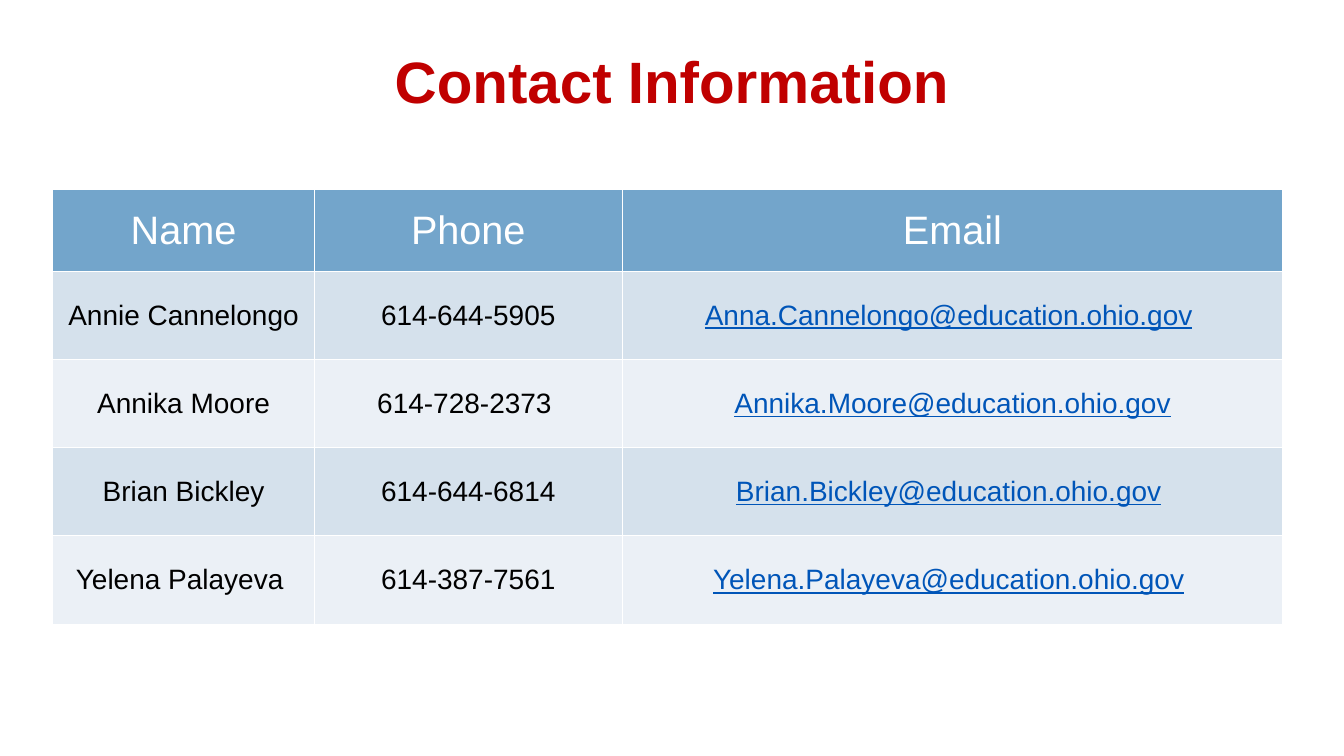
from pptx import Presentation
from pptx.dml.color import RGBColor
from pptx.enum.text import MSO_ANCHOR, MSO_AUTO_SIZE, PP_ALIGN
from pptx.util import Inches, Pt

# Content
TITLE = "Contact Information"
HEADINGS = ("Name", "Phone", "Email")
CONTACTS = [
    ("Annie Cannelongo", "614-644-5905", "Anna.Cannelongo@education.ohio.gov "),
    ("Annika Moore", "614-728-2373 ", "Annika.Moore@education.ohio.gov"),
    ("Brian Bickley", "614-644-6814", "Brian.Bickley@education.ohio.gov "),
    ("Yelena Palayeva ", "614-387-7561", "Yelena.Palayeva@education.ohio.gov "),
]

# Look
FONT = "Arial"
RED = RGBColor(0xC0, 0x00, 0x00)
WHITE = RGBColor(0xFF, 0xFF, 0xFF)
BLACK = RGBColor(0x00, 0x00, 0x00)
LINK_BLUE = RGBColor(0x00, 0x55, 0xB8)
HEADER_BLUE = RGBColor(0x73, 0xA5, 0xCB)
BANDS = (RGBColor(0xD5, 0xE1, 0xEC), RGBColor(0xEB, 0xF0, 0xF6))

# Grid, in inches
COLUMNS = (3.11, 3.67, 7.86)
HEADER_HEIGHT, ROW_HEIGHT = 0.97, 1.05
TABLE_LEFT, TABLE_TOP = 0.63, 2.26
EMAIL = HEADINGS.index("Email")


def add_span(para, text, size, color, bold=False, underline=False):
    span = para.add_run()
    span.text = text
    font = span.font
    font.name, font.size, font.bold = FONT, Pt(size), bold
    font.underline = underline
    font.color.rgb = color


def style_cell(cell, fill):
    cell.fill.solid()
    cell.fill.fore_color.rgb = fill
    cell.vertical_anchor = MSO_ANCHOR.MIDDLE
    cell.margin_left = cell.margin_right = Inches(0.12)
    cell.margin_top = cell.margin_bottom = Inches(0.06)
    para = cell.text_frame.paragraphs[0]
    para.alignment = PP_ALIGN.CENTER
    return para


deck = Presentation()
deck.slide_width, deck.slide_height = Inches(16), Inches(9)
page = deck.slides.add_slide(deck.slide_layouts[5])

# Title
title = page.shapes.title
title.left, title.top = Inches(2.6), Inches(0.53)
title.width, title.height = Inches(10.8), Inches(0.85)
frame = title.text_frame
frame.auto_size = MSO_AUTO_SIZE.NONE
frame.margin_left = frame.margin_right = frame.margin_top = frame.margin_bottom = 0
frame.vertical_anchor = MSO_ANCHOR.MIDDLE
frame.paragraphs[0].alignment = PP_ALIGN.CENTER
add_span(frame.paragraphs[0], TITLE, 50, RED, bold=True)

# Table
heights = [HEADER_HEIGHT] + [ROW_HEIGHT] * len(CONTACTS)
table = page.shapes.add_table(
    len(heights), len(COLUMNS), Inches(TABLE_LEFT), Inches(TABLE_TOP),
    Inches(sum(COLUMNS)), Inches(sum(heights))).table
for column, width in zip(table.columns, COLUMNS):
    column.width = Inches(width)
for row, height in zip(table.rows, heights):
    row.height = Inches(height)

# Header row
for col, heading in enumerate(HEADINGS):
    add_span(style_cell(table.cell(0, col), HEADER_BLUE), heading, 34, WHITE)

# Contact rows, with only the address itself underlined
for number, contact in enumerate(CONTACTS):
    for col, text in enumerate(contact):
        para = style_cell(table.cell(number + 1, col), BANDS[number % 2])
        if col == EMAIL:
            address = text.rstrip()
            add_span(para, address, 24, LINK_BLUE, underline=True)
            text = text[len(address):]
        if text:
            add_span(para, text, 24, BLACK)

deck.save("out.pptx")
